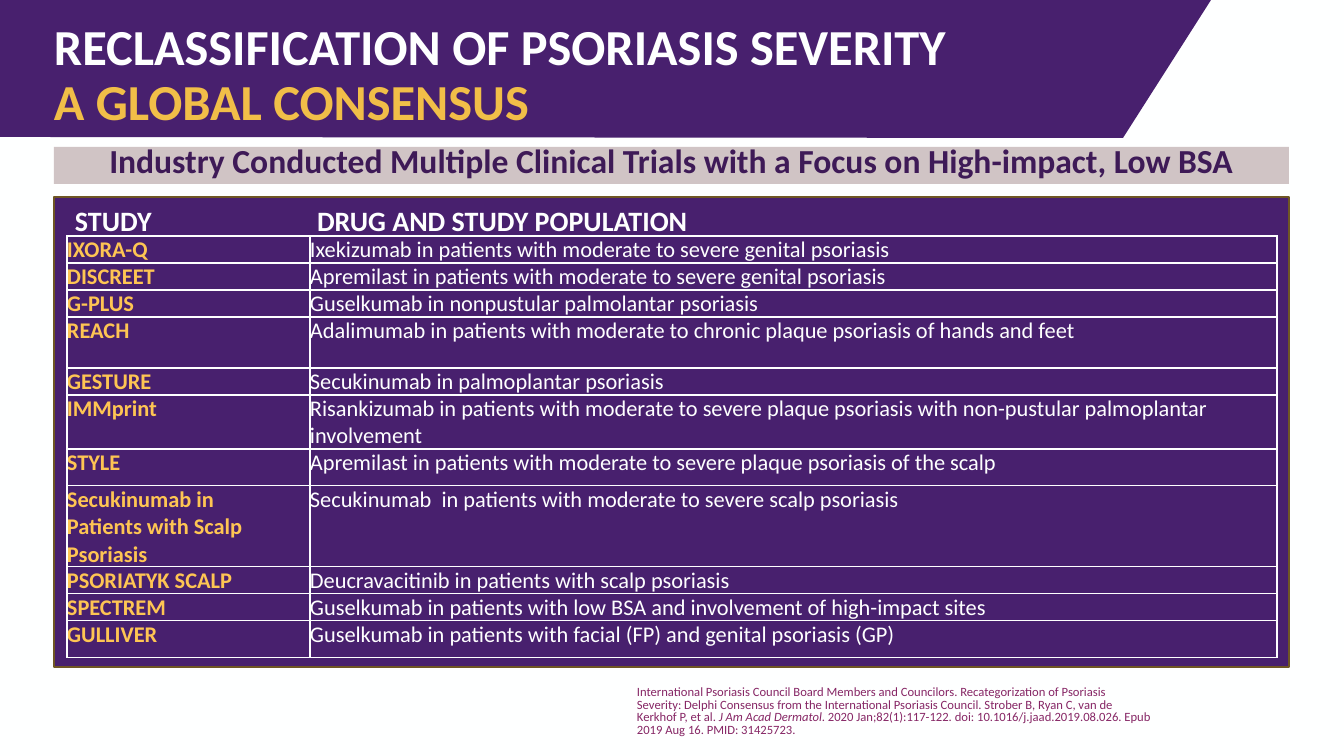
from lxml import etree
from pptx import Presentation, util as u
from pptx.dml.color import RGBColor
from pptx.enum import text
from pptx.oxml import ns

SCALE = 914400 / 100.8
PURPLE, WHITE, GOLD = "48206E", "FEFFFF", "FEC553"


def paint(fill, colour):
    fill.solid()
    fill.fore_color.rgb = RGBColor.from_string(colour)


def add_span(para, words, size, colour, bold=False, italic=False):
    span = para.add_run()
    span.text = words
    span.font.name = "Calibri"
    span.font.size = u.Pt(size)
    span.font.bold = bold
    span.font.italic = italic
    paint(span.font.fill, colour)


deck = Presentation()
deck.slide_width = round(1344 * SCALE)
deck.slide_height = round(756 * SCALE)
page = deck.slides.add_slide(deck.slide_layouts[6])
paint(page.background.fill, WHITE)

builder = page.shapes.build_freeform(0, 0, scale=SCALE)
builder.add_line_segments([(1211, 0), (1123, 138), (0, 137)], close=True)
banner = builder.convert_to_shape()
banner.shadow.inherit = False
paint(banner.fill, PURPLE)
banner.line.fill.background()

for top, height, colour, outline in [(147, 37, "D0C4C5", None), (197, 470, PURPLE, "6F5624")]:
    panel = page.shapes.add_shape(1, *[round(n * SCALE) for n in (54, top, 1235, height)])
    panel.shadow.inherit = False
    paint(panel.fill, colour)
    if outline:
        paint(panel.line.fill, outline)
        panel.line.width = u.Pt(1.5)
    else:
        panel.line.fill.background()

LEFT, CENTER = text.PP_ALIGN.LEFT, text.PP_ALIGN.CENTER
TOP, BOTTOM = text.MSO_ANCHOR.TOP, text.MSO_ANCHOR.BOTTOM
boxes = [
    ((54, 10, 1195, 121), BOTTOM, LEFT, 39.6, [
        ("RECLASSIFICATION OF PSORIASIS SEVERITY", 36, WHITE, True),
        None,
        ("A GLOBAL CONSENSUS", 36, "F1BE48", True)]),
    ((4, 147, 1335, 34), TOP, CENTER, 23.8, [
        ("Industry Conducted Multiple Clinical Trials with a Focus on High-impact, Low BSA",
         24, "3E1A57", True)]),
    ((637, 686, 514, 52), TOP, LEFT, 9.2, [
        ("International Psoriasis Council Board Members and Councilors. Recategorization of "
         "Psoriasis Severity: Delphi Consensus from the International Psoriasis Council. "
         "Strober B, Ryan C, van de Kerkhof P, et al. ", 9, "862665"),
        ("J Am Acad Dermatol", 9, "862665", False, True),
        (". 2020 Jan;82(1):117-122. doi: 10.1016/j.jaad.2019.08.026. Epub 2019 Aug 16. "
         "PMID: 31425723.", 9, "862665")]),
    ((75, 203, 200, 34), TOP, LEFT, None, [("STUDY", 20, WHITE, True)]),
    ((317, 204, 500, 34), TOP, LEFT, None, [("DRUG AND STUDY POPULATION", 20, WHITE, True)]),
]
for place, anchor, align, spacing, spans in boxes:
    box = page.shapes.add_textbox(*[round(n * SCALE) for n in place])
    frame = box.text_frame
    frame.word_wrap = True
    frame.vertical_anchor = anchor
    frame.margin_left = frame.margin_top = frame.margin_right = frame.margin_bottom = 0
    para = frame.paragraphs[0]
    para.alignment = align
    if spacing:
        para.line_spacing = u.Pt(spacing)
    for span in spans:
        if span:
            add_span(para, *span)
        else:
            para.add_line_break()

studies = [
    (27, "IXORA-Q", "Ixekizumab in patients with moderate to severe genital psoriasis"),
    (27, "DISCREET", "Apremilast in patients with moderate to severe genital psoriasis"),
    (27, "G-PLUS", "Guselkumab in nonpustular palmolantar psoriasis"),
    (51, "REACH", "Adalimumab in patients with moderate to chronic plaque psoriasis of hands and feet"),
    (27, "GESTURE", "Secukinumab in palmoplantar psoriasis"),
    (54, "IMMprint", "Risankizumab in patients with moderate to severe plaque psoriasis with "
     "non-pustular palmoplantar involvement"),
    (37, "STYLE", "Apremilast in patients with moderate to severe plaque psoriasis of the scalp"),
    (81, "Secukinumab in\nPatients with Scalp Psoriasis",
     "Secukinumab  in patients with moderate to severe scalp psoriasis"),
    (27, "PSORIATYK SCALP", "Deucravacitinib in patients with scalp psoriasis"),
    (27, "SPECTREM", "Guselkumab in patients with low BSA and involvement of high-impact sites"),
    (37, "GULLIVER", "Guselkumab in patients with facial (FP) and genital psoriasis (GP)"),
]
total = sum(study[0] for study in studies)
place = [round(n * SCALE) for n in (67, 236, 1210, total)]
table = page.shapes.add_table(len(studies), 2, *place).table
table.first_row = False
table.horz_banding = False
for column, width in zip(table.columns, (243, 967)):
    column.width = round(width * SCALE)
for row, (height, *entries) in zip(table.rows, studies):
    row.height = round(height * SCALE)
    for cell, entry, colour, bold in zip(row.cells, entries, (GOLD, WHITE), (True, False)):
        cell.margin_left = cell.margin_top = cell.margin_right = cell.margin_bottom = 0
        for index, line in enumerate(entry.split("\n")):
            frame = cell.text_frame
            para = frame.add_paragraph() if index else frame.paragraphs[0]
            add_span(para, line, 16, colour, bold)
        properties = cell._tc.get_or_add_tcPr()
        for side in ("a:lnL", "a:lnR", "a:lnT", "a:lnB"):
            border = etree.SubElement(properties, ns.qn(side), w="12700")
            solid = etree.SubElement(border, ns.qn("a:solidFill"))
            etree.SubElement(solid, ns.qn("a:srgbClr"), val=WHITE)
        paint(cell.fill, PURPLE)

deck.save("out.pptx")
